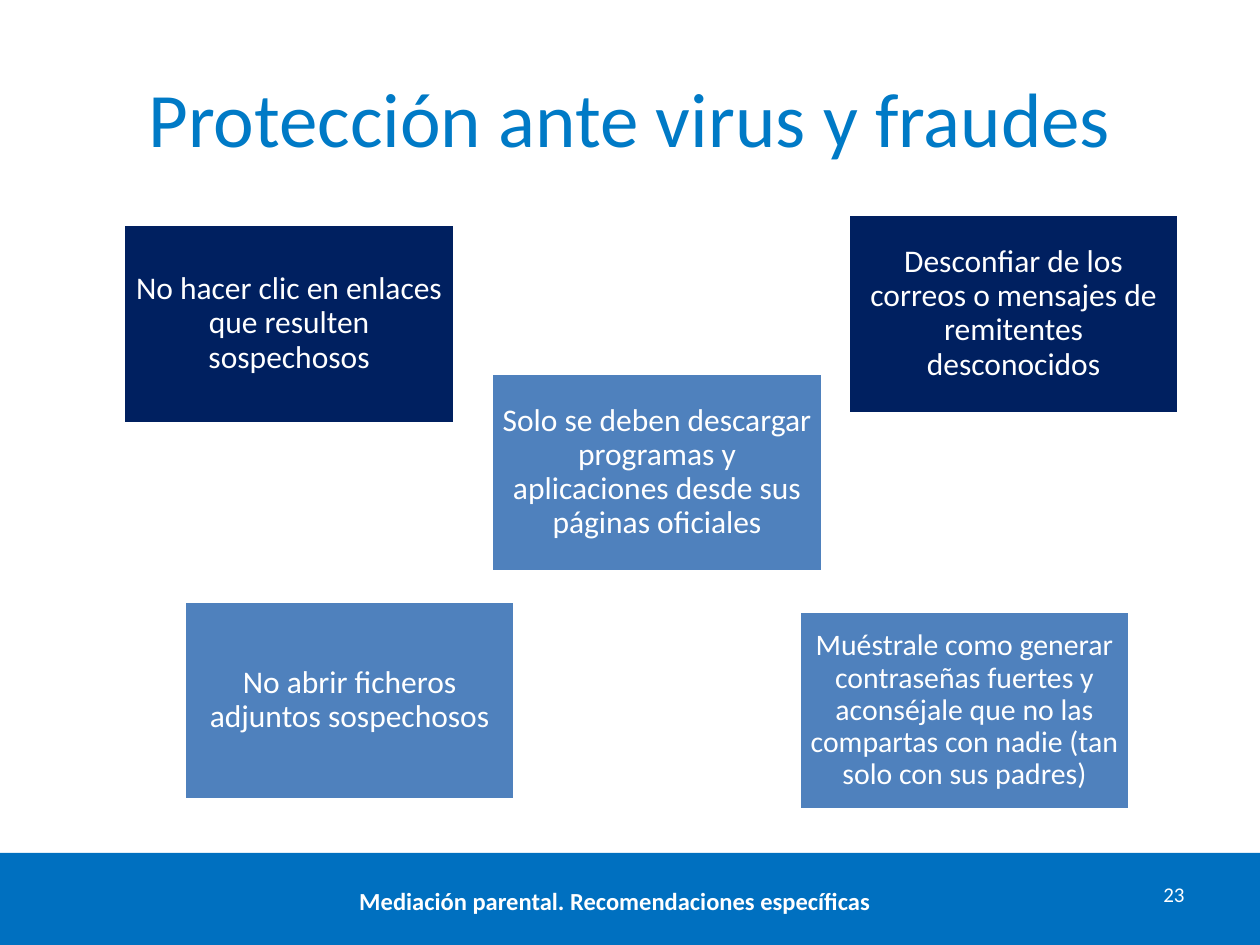
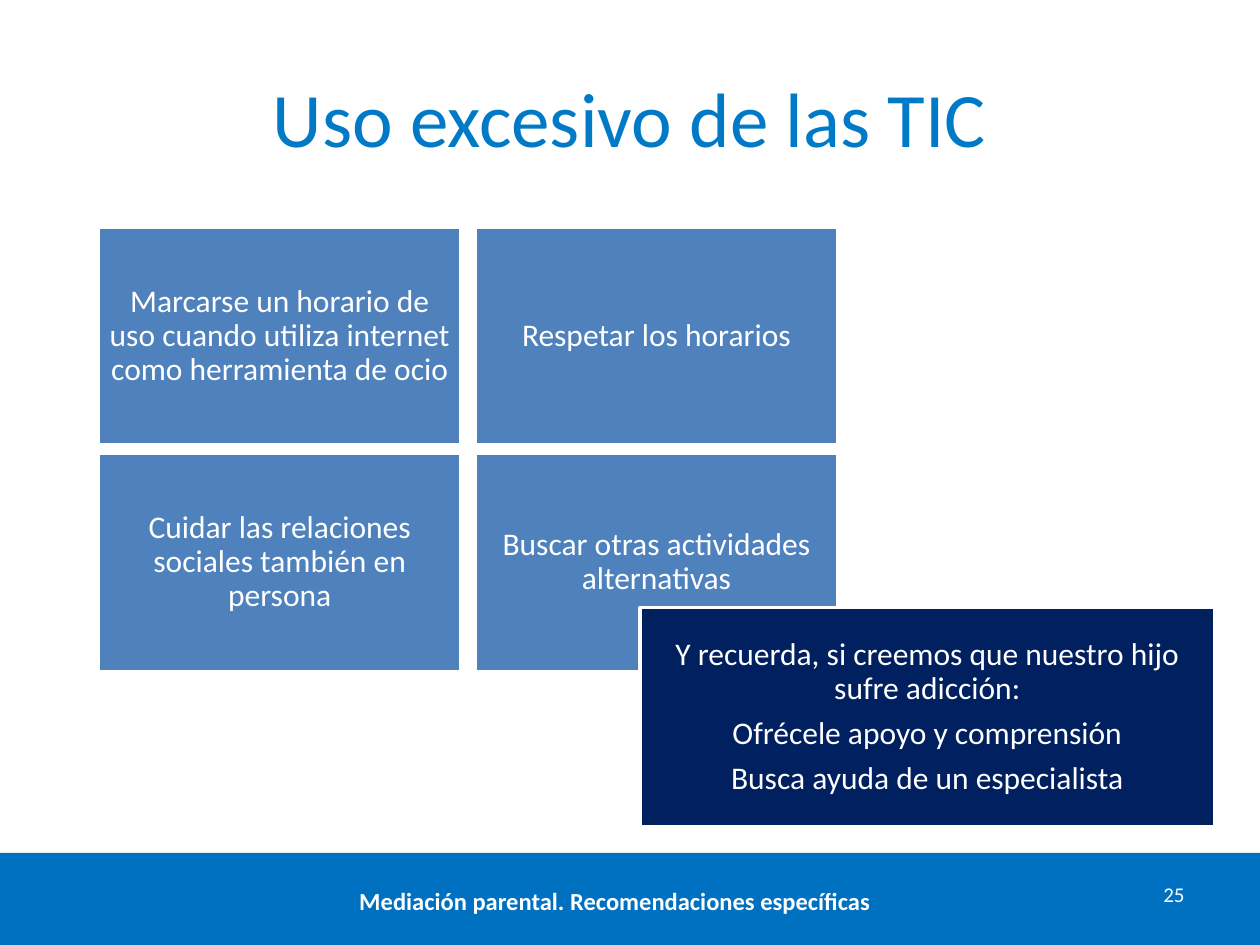
from dataclasses import dataclass

from pptx import Presentation
from pptx.dml.color import RGBColor
from pptx.enum.shapes import MSO_SHAPE as Shape
from pptx.enum.text import MSO_ANCHOR as Anchor, PP_ALIGN as Align
from pptx.util import Inches, Pt


@dataclass(frozen=True)
class Theme:
    font: str = "Calibri"
    title: str = "007AC6"
    band: str = "0070C0"
    navy: str = "002060"
    blue: str = "4F81BD"
    white: str = "FFFFFF"
    title_size: int = 44
    card_size: int = 18
    dense_card_size: int = 17
    footer_size: int = 14
    number_size: int = 12
    card_line: int = 2
    card_inset: float = 0.07
    line_spacing: float = 0.9
    space_after: float = 0.35


THEME = Theme()
WIDTH, HEIGHT = Inches(10), Inches(7.5)
FOOTER = "Mediación parental. Recomendaciones específicas"

# Areas are left, top, width, height in percent of the slide.
TITLE_AREA = (5, 4, 90, 16.67)
BAND_AREA = (0, 90.27, 100, 9.73)
FOOTER_AREA = (17.7, 93.07, 62.2, 5.33)
NUMBER_AREA = (87, 92.67, 8, 5.33)

VIRUS_CARD = (26.3, 21.07)
VIRUS_TIPS = [
    ((9.8, 23.73), THEME.navy, THEME.card_size,
     "No hacer clic en enlaces que resulten sospechosos"),
    ((39, 39.47), THEME.blue, THEME.card_size,
     "Solo se deben descargar programas y aplicaciones desde sus páginas oficiales"),
    ((67.3, 22.67), THEME.navy, THEME.card_size,
     "Desconfiar de los correos o mensajes de remitentes desconocidos"),
    ((14.6, 63.6), THEME.blue, THEME.card_size,
     "No abrir ficheros adjuntos sospechosos"),
    ((63.4, 64.67), THEME.blue, THEME.dense_card_size,
     "Muéstrale como generar contraseñas fuertes y aconséjale que no las "
     "compartas con nadie (tan solo con sus padres)"),
]

HABIT_ORIGIN = (7.8, 24)
HABIT_CARD = (28.8, 23.07)
HABIT_GAP = (1.1, 0.9)
HABITS = [
    ["Marcarse un horario de uso cuando utiliza internet como herramienta de ocio",
     "Respetar los horarios"],
    ["Cuidar las relaciones sociales también en persona",
     "Buscar otras actividades alternativas"],
]
REMINDER_AREA = (50.8, 64.27, 45.6, 23.2)
REMINDER = [
    "Y recuerda, si creemos que nuestro hijo sufre adicción:",
    "Ofrécele apoyo y comprensión",
    "Busca ayuda de un especialista",
]


def place(area):
    left, top, width, height = area
    return (int(WIDTH * left / 100), int(HEIGHT * top / 100),
            int(WIDTH * width / 100), int(HEIGHT * height / 100))


def write(para, text, size, color, align, bold=False):
    para.alignment = align
    span = para.add_run()
    span.text = text
    span.font.name = THEME.font
    span.font.size = Pt(size)
    span.font.bold = bold
    span.font.color.rgb = RGBColor.from_string(color)


def add_label(page, area, text, size, color, align=Align.CENTER,
              anchor=Anchor.TOP, bold=False):
    frame = page.shapes.add_textbox(*place(area)).text_frame
    frame.word_wrap = True
    frame.vertical_anchor = anchor
    write(frame.paragraphs[0], text, size, color, align, bold)


def add_rectangle(page, area, fill):
    box = page.shapes.add_shape(Shape.RECTANGLE, *place(area))
    box.shadow.inherit = False
    box.fill.solid()
    box.fill.fore_color.rgb = RGBColor.from_string(fill)
    box.line.fill.background()
    return box


def add_card(page, area, fill, lines, size=THEME.card_size):
    box = add_rectangle(page, area, fill)
    box.line.color.rgb = RGBColor.from_string(THEME.white)
    box.line.width = Pt(THEME.card_line)
    frame = box.text_frame
    frame.word_wrap = True
    frame.vertical_anchor = Anchor.MIDDLE
    frame.margin_left = frame.margin_right = Inches(THEME.card_inset)
    frame.margin_top = frame.margin_bottom = Inches(THEME.card_inset)
    for index, line in enumerate(lines):
        para = frame.add_paragraph() if index else frame.paragraphs[0]
        para.line_spacing = THEME.line_spacing
        para.space_after = Pt(size * THEME.space_after)
        write(para, line, size, THEME.white, Align.CENTER)


def add_page(deck, title, number):
    page = deck.slides.add_slide(deck.slide_layouts[6])
    add_rectangle(page, BAND_AREA, THEME.band)
    add_label(page, TITLE_AREA, title, THEME.title_size, THEME.title,
              anchor=Anchor.MIDDLE)
    add_label(page, FOOTER_AREA, FOOTER, THEME.footer_size, THEME.white, bold=True)
    add_label(page, NUMBER_AREA, str(number), THEME.number_size, THEME.white,
              align=Align.RIGHT)
    return page


def add_virus_page(deck):
    page = add_page(deck, "Protección ante virus y fraudes", 23)
    for corner, fill, size, tip in VIRUS_TIPS:
        add_card(page, corner + VIRUS_CARD, fill, [tip], size)


def add_habits_page(deck):
    page = add_page(deck, "Uso excesivo de las TIC", 25)
    for row, habits in enumerate(HABITS):
        for column, habit in enumerate(habits):
            corner = tuple(
                start + step * (side + gap)
                for start, step, side, gap in zip(
                    HABIT_ORIGIN, (column, row), HABIT_CARD, HABIT_GAP))
            add_card(page, corner + HABIT_CARD, THEME.blue, [habit])
    add_card(page, REMINDER_AREA, THEME.navy, REMINDER)


def main():
    deck = Presentation()
    deck.slide_width, deck.slide_height = WIDTH, HEIGHT
    add_virus_page(deck)
    add_habits_page(deck)
    deck.save("out.pptx")


if __name__ == "__main__":
    main()
